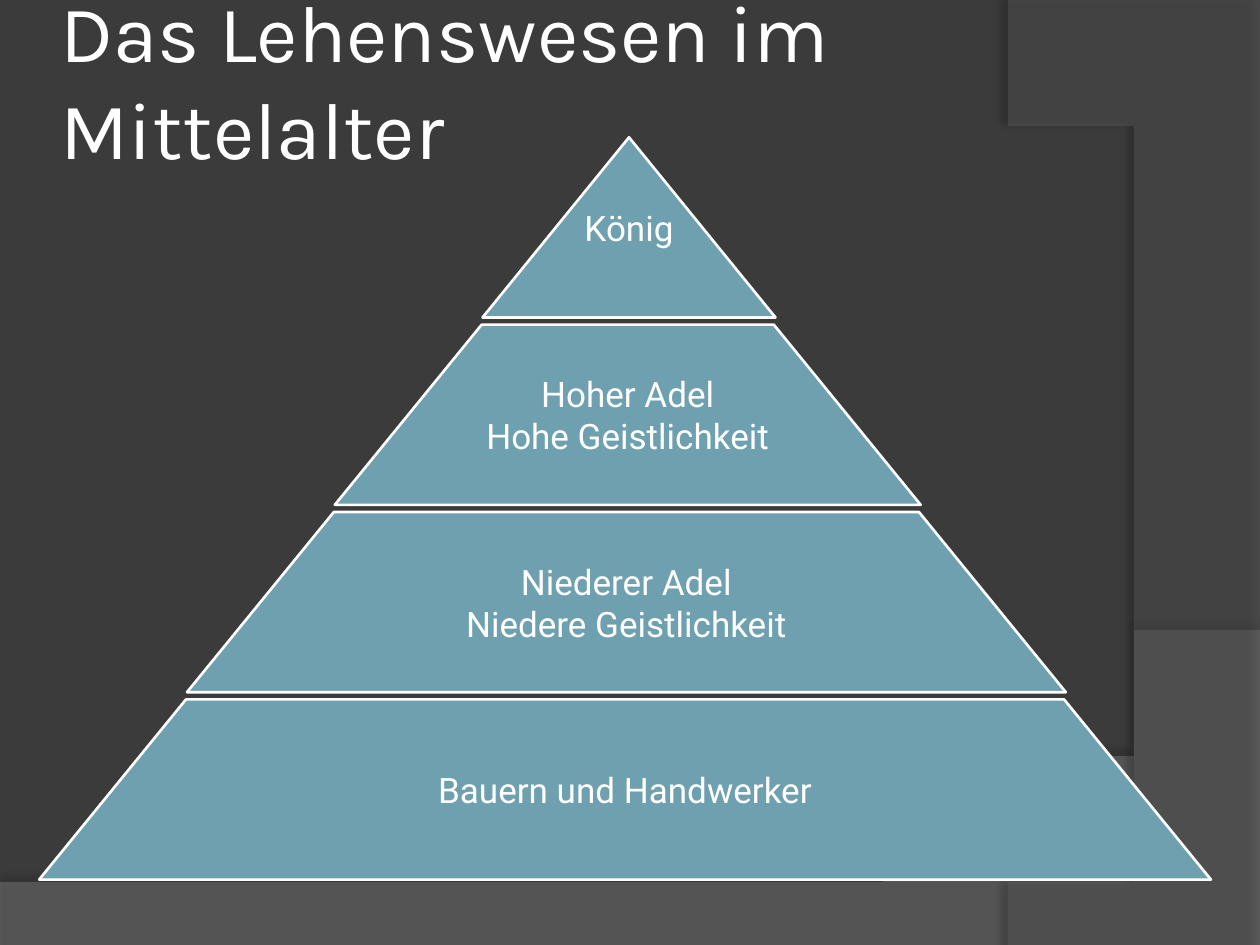
from lxml import etree
from pptx import Presentation
from pptx.dml.color import RGBColor
from pptx.enum import shapes as sh, text as tx
from pptx.oxml import ns
from pptx.util import Inches, Pt

# Content
TITLE = "Das Lehenswesen im Mittelalter"
LEVELS = [  # from top to bottom
    ["König"],
    ["Hoher Adel", "Hohe Geistlichkeit"],
    ["Niederer Adel", "Niedere Geistlichkeit"],
    ["Bauern und Handwerker"],
]
WAVES = [  # corner points, then a curve: start, two controls, end
    dict(line=[(10, 5.2), (10, 7.51), (0, 7.51)],
         curve=[(0, 7.05), (3.91, 7.19), (5.59, 7.29), (10, 5.2)],
         color="7F7F7F", alpha=45, shade=35, dist=3.5, angle=270),
    dict(line=[(10, 0.02), (10, 7.5)],
         curve=[(8.21, 7.5), (9.35, 6.19), (10.18, 3), (8, 0)],
         color="5E5E5E", alpha=40, shade=45, dist=4, angle=180),
]
WHITE, BLUE, DARK = "FFFFFF", "6EA0B0", "3B3B3B"

# Pyramid geometry in inches
LEFT, TOP, WIDE, HIGH = 3.83, 1.09, 2.325, 1.43
SHIFT, DROP, SLANT = 1.173, 1.487, 0.815


def paint(fmt, color):
    fmt.solid()
    fmt.fore_color.rgb = RGBColor.from_string(color)


def node(parent, tag, **attrs):
    item = etree.SubElement(parent, ns.qn("a:" + tag))
    for key, val in attrs.items():
        item.set(key, str(val))
    return item


def write(shape, lines, size, font, pad, align):
    frame = shape.text_frame
    form = dict(word_wrap=True, auto_size=tx.MSO_AUTO_SIZE.NONE,
                vertical_anchor=tx.MSO_ANCHOR.MIDDLE)
    for side in ("left", "right", "top", "bottom"):
        form["margin_" + side] = Inches(pad)
    for key, val in form.items():
        setattr(frame, key, val)
    frame.text = "\n".join(lines)
    for para in frame.paragraphs:
        para.alignment = align
        face = para.runs[0].font
        face.name, face.size = font, Pt(size)
        paint(face.fill, WHITE)


def bezier(pts, steps=40):
    for n in range(steps + 1):
        t = n / steps
        parts = ((1 - t) ** 3, 3 * t * (1 - t) ** 2, 3 * t * t * (1 - t), t ** 3)
        yield tuple(sum(w * p[k] for w, p in zip(parts, pts)) for k in (0, 1))


def wave(slide, item):
    pts = item["line"] + list(bezier(item["curve"]))
    pen = slide.shapes.build_freeform(*pts[0], scale=Inches(1))
    pen.add_line_segments(pts[1:], close=True)
    shape = pen.convert_to_shape()
    paint(shape.fill, item["color"])
    shape.line.fill.background()
    props = shape._element.spPr
    tone = props.find(".//" + ns.qn("a:srgbClr"))
    node(tone, "alpha", val=item["alpha"] * 1000)
    # Soft shadow
    cast = node(node(props, "effectLst"), "outerShdw", blurRad=Pt(4),
                dist=Pt(item["dist"]), dir=item["angle"] * 60000,
                algn="ctr", rotWithShape=0)
    node(node(cast, "srgbClr", val="000000"), "alpha", val=item["shade"] * 1000)


def level(slide, row, lines):
    left, top, wide = LEFT - row * SHIFT, TOP + row * DROP, WIDE * (row + 1)
    group = slide.shapes.add_group_shape().shapes
    step = group.add_shape(sh.MSO_SHAPE.TRAPEZOID, *map(Inches, (left, top, wide, HIGH)))
    step.adjustments[0] = SLANT
    step.shadow.inherit = False
    paint(step.fill, BLUE)
    paint(step.line.fill, WHITE)
    step.line.width = Pt(1.5)
    # Label takes the inner 65 % below the tip
    inner = wide * 0.65 if row else wide
    box = (left + (wide - inner) / 2, top, inner, HIGH)
    label = group.add_textbox(*map(Inches, box))
    write(label, lines, 20, "Roboto", 0.03, tx.PP_ALIGN.CENTER)


def main():
    prs = Presentation()
    prs.slide_width, prs.slide_height = Inches(10), Inches(7.5)
    slide = prs.slides.add_slide(prs.slide_layouts[5])
    paint(slide.background.fill, DARK)

    # Backdrop
    for item in WAVES:
        wave(slide, item)

    # Title, in front of the backdrop
    title = slide.shapes.title
    title.left, title.top, title.width, title.height = map(Inches, (0.43, 0, 9, 1.25))
    write(title, [TITLE], 46, "Karla", 0.05, tx.PP_ALIGN.LEFT)
    slide.shapes._spTree.append(title._element)

    # Pyramid, base first
    for row, lines in reversed(list(enumerate(LEVELS))):
        level(slide, row, lines)
    prs.save("out.pptx")


if __name__ == "__main__":
    main()
